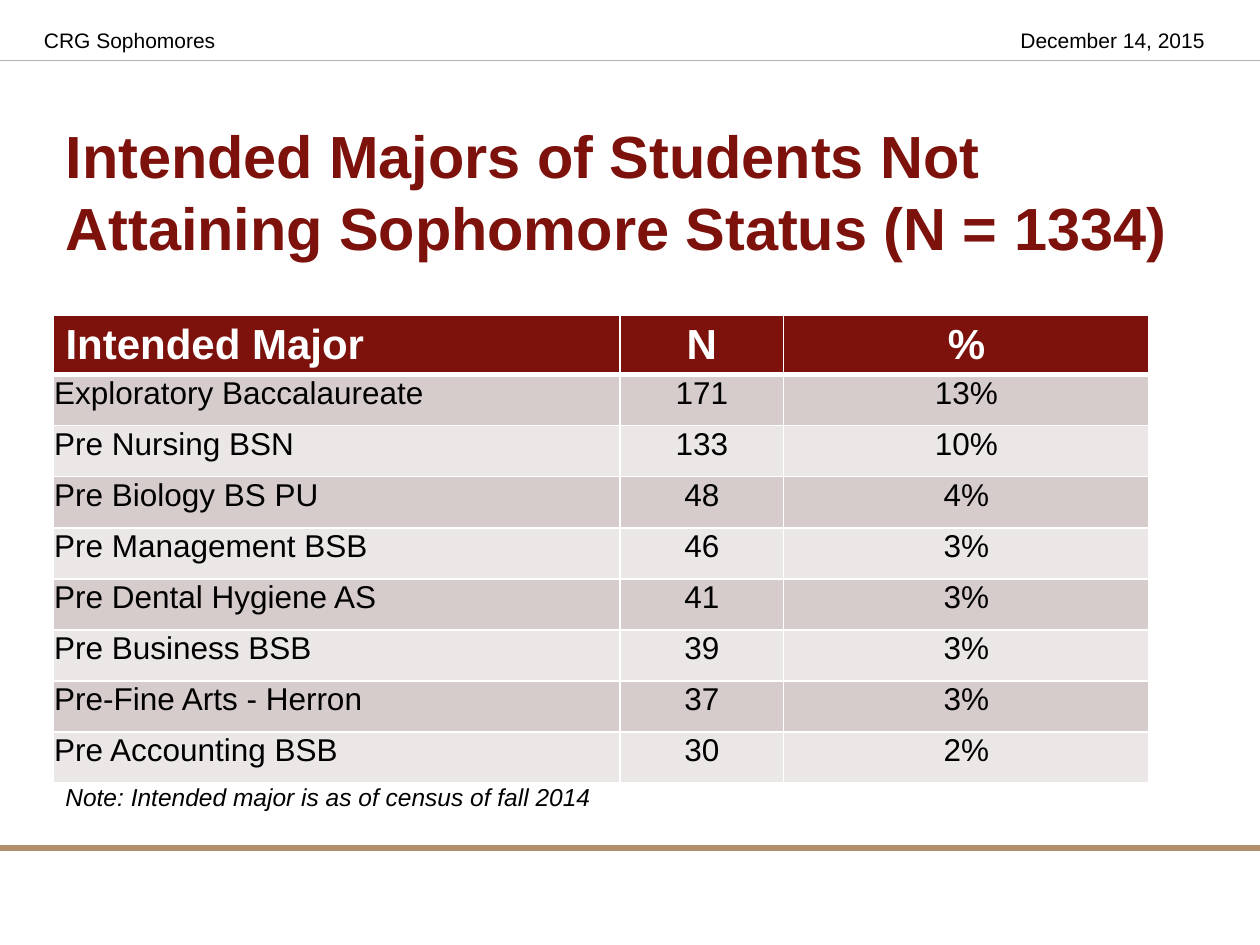
from lxml.etree import SubElement
from pptx import Presentation
from pptx.dml.color import RGBColor as RGB
from pptx.enum.shapes import MSO_CONNECTOR as Conn
from pptx.enum.text import MSO_ANCHOR as Anchor, PP_ALIGN as Align
from pptx.oxml import parse_xml
from pptx.oxml.ns import nsdecls, qn
from pptx.util import Inches, Pt

HUES = {
    "red": "7D110C", "tan": "AF906A", "gray": "B0B2B4", "black": "000000",
    "white": "FFFFFF", "dark": "D7CCCC", "light": "ECE7E7",
}
HEAD = ("Intended Major", "N", "%")
ROWS = [
    ("Exploratory Baccalaureate", "171", "13%"),
    ("Pre Nursing BSN", "133", "10%"),
    ("Pre Biology BS PU", "48", "4%"),
    ("Pre Management BSB", "46", "3%"),
    ("Pre Dental Hygiene AS", "41", "3%"),
    ("Pre Business BSB", "39", "3%"),
    ("Pre-Fine Arts - Herron", "37", "3%"),
    ("Pre Accounting BSB", "30", "2%"),
]
WIDTHS = (4.5, 1.3, 2.9)


def write(frame, text, size=12, hue="black", bold=False, slant=False,
          align=Align.LEFT):
    para = frame.paragraphs[0]
    para.alignment = align
    run = para.add_run()
    run.text = text
    font = run.font
    font.name, font.size = "Arial", Pt(size)
    font.bold, font.italic = bold, slant
    font.color.rgb = RGB.from_string(HUES[hue])


def add_title(slide, text):
    title = slide.shapes.title
    title.left, title.top = Inches(0.42), Inches(0.89)
    title.width, title.height = Inches(9.03), Inches(1.25)
    frame = title.text_frame
    frame.word_wrap = True
    frame.vertical_anchor = Anchor.MIDDLE
    write(frame, text, size=34, hue="red", bold=True)


def add_label(slide, text, left, top, width, height, wrap=True, **style):
    box = slide.shapes.add_textbox(
        Inches(left), Inches(top), Inches(width), Inches(height))
    box.text_frame.word_wrap = wrap
    write(box.text_frame, text, **style)


def add_rule(slide, top, hue, weight):
    rule = slide.shapes.add_connector(
        Conn.STRAIGHT, 0, Inches(top), Inches(10), Inches(top))
    rule.line.color.rgb = RGB.from_string(HUES[hue])
    rule.line.width = Pt(weight)
    SubElement(rule._element.spPr, qn("a:effectLst"))


def edge(cell, low, high):
    sides = {"lnL": 1, "lnR": 1, "lnT": high, "lnB": low}
    props = cell._tc.get_or_add_tcPr()
    for spot, (tag, weight) in enumerate(sides.items()):
        props.insert(spot, parse_xml(
            f'<a:{tag} {nsdecls("a")} w="{Pt(weight)}"><a:solidFill>'
            f'<a:srgbClr val="{HUES["white"]}"/></a:solidFill></a:{tag}>'))


def fill_cell(cell, text, row, col):
    cell.fill.solid()
    hue = "red" if row == 0 else ("light", "dark")[row % 2]
    cell.fill.fore_color.rgb = RGB.from_string(HUES[hue])
    align = Align.CENTER if col else Align.LEFT
    if row == 0:
        write(cell.text_frame, text, size=24, hue="white", bold=True,
              align=align)
    else:
        cell.margin_left = cell.margin_right = Inches(0.01)
        cell.margin_top, cell.margin_bottom = Inches(0.01), 0
        write(cell.text_frame, text, size=18, align=align)
    edge(cell, low=3 if row == 0 else 1, high=3 if row == 1 else 1)


def add_grid(slide):
    rows = [HEAD] + ROWS
    grid = slide.shapes.add_table(
        len(rows), len(HEAD), Inches(0.42), Inches(2.5),
        Inches(sum(WIDTHS)), Inches(3.65)).table
    grid.horz_banding = False
    for col, width in enumerate(WIDTHS):
        grid.columns[col].width = Inches(width)
    for row, texts in enumerate(rows):
        for col, text in enumerate(texts):
            fill_cell(grid.cell(row, col), text, row, col)


def main():
    deck = Presentation()
    deck.slide_width, deck.slide_height = Inches(10), Inches(7.5)
    slide = deck.slides.add_slide(deck.slide_layouts[5])
    add_rule(slide, 0.48, "gray", 0.75)
    add_rule(slide, 6.73, "tan", 3.75)
    add_title(slide, "Intended Majors of Students Not Attaining "
                     "Sophomore Status (N = 1334)")
    add_grid(slide)
    add_label(slide, "December 14, 2015", 8, 0.17, 1.75, 0.33)
    add_label(slide, "CRG Sophomores", 0.25, 0.17, 5.42, 0.33)
    add_label(slide, "Note: Intended major is as of census of fall 2014",
              0.42, 6.16, 4.39, 0.34, wrap=False, size=14, slant=True)
    deck.save("out.pptx")


if __name__ == "__main__":
    main()
